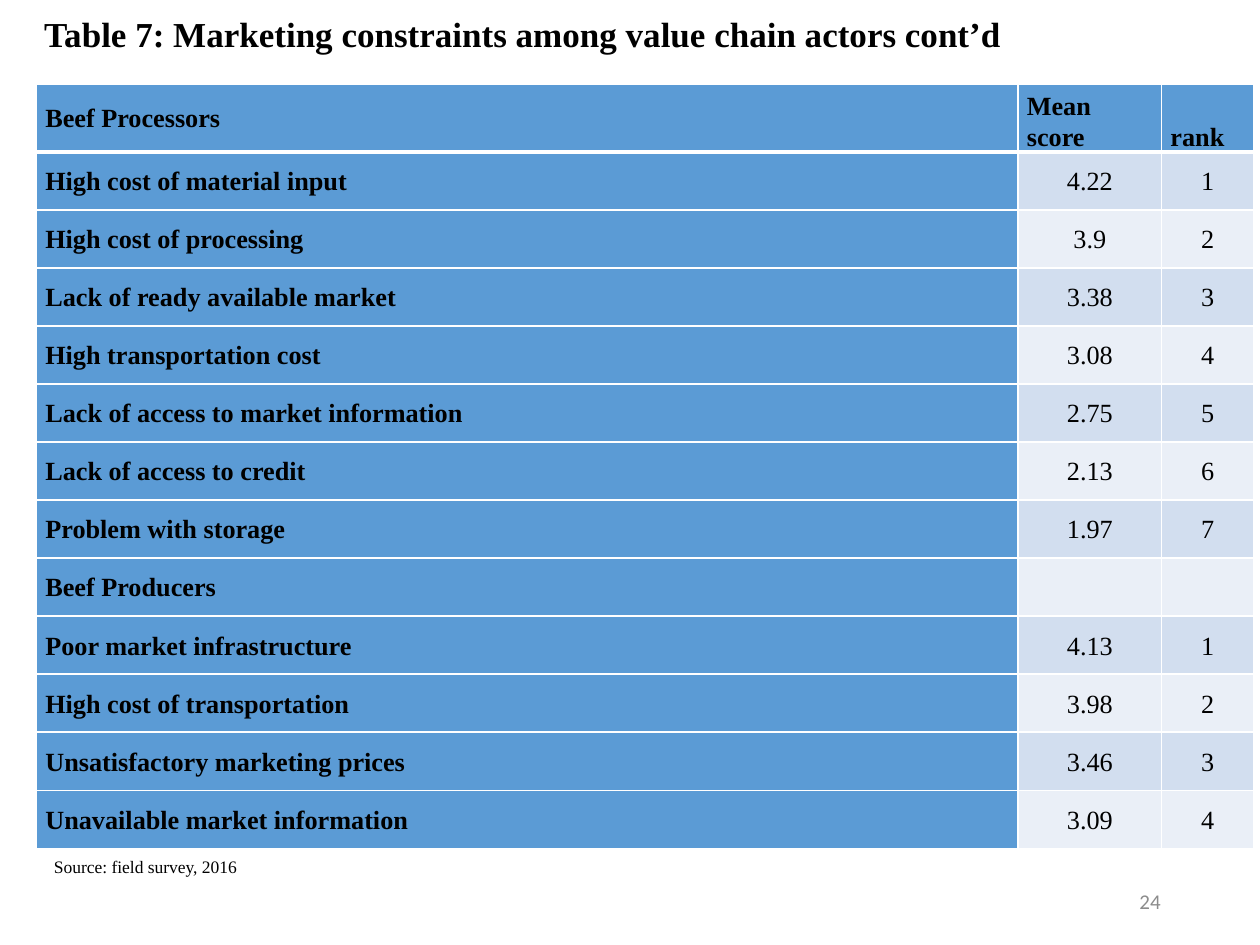
from dataclasses import dataclass
from typing import Optional

from lxml import etree
from pptx import Presentation
from pptx import util as u
from pptx.dml import color
from pptx.enum import text
from pptx.oxml import ns

GRID_COLUMNS, GRID_ROWS = 100, 75
SLIDE_WIDTH, SLIDE_HEIGHT = u.Inches(10), u.Inches(7.5)
SERIF, SANS = "Times New Roman", "Calibri"
BLACK, WHITE, GREY = "000000", "FFFFFF", "8C8C8C"
HEADING_BLUE, BANDS = "5B9BD5", ("D2DEEF", "EAEFF7")
COLUMN_SPANS = (77.9, 11.4, 7.3)
ROW_SPAN = 4.61
ALIGN, ANCHOR = text.PP_ALIGN, text.MSO_ANCHOR


@dataclass(frozen=True)
class Area:
    column: float
    row: float
    columns: float
    rows: float


@dataclass(frozen=True)
class Constraint:
    label: str
    score: str = ""
    rank: str = ""


TITLE_AREA = Area(2.5, 0, 95, 5.8)
TABLE_AREA = Area(2.9, 6.7, sum(COLUMN_SPANS), 13 * ROW_SPAN)
SOURCE_AREA = Area(3.3, 67.6, 40, 2.6)
NUMBER_AREA = Area(70.6, 69.5, 22.5, 4)

CONSTRAINTS = (
    Constraint("Beef Processors", "Mean score", "rank"),
    Constraint("High cost of material input", "4.22", "1"),
    Constraint("High cost of processing", "3.9", "2"),
    Constraint("Lack of ready available market", "3.38", "3"),
    Constraint("High transportation cost", "3.08", "4"),
    Constraint("Lack of access to market information", "2.75", "5"),
    Constraint("Lack of access to credit", "2.13", "6"),
    Constraint("Problem with storage", "1.97", "7"),
    Constraint("Beef Producers"),
    Constraint("Poor market infrastructure", "4.13", "1"),
    Constraint("High cost of transportation", "3.98", "2"),
    Constraint("Unsatisfactory marketing prices", "3.46", "3"),
    Constraint("Unavailable market information", "3.09", "4"),
)


def across(columns: float) -> int:
    return round(SLIDE_WIDTH * columns / GRID_COLUMNS)


def down(rows: float) -> int:
    return round(SLIDE_HEIGHT * rows / GRID_ROWS)


def bounds(area: Area) -> tuple:
    return across(area.column), down(area.row), across(area.columns), down(area.rows)


def rgb(value: str) -> color.RGBColor:
    return color.RGBColor.from_string(value)


def write(frame, wording: str, *, size: float, font: str = SERIF, ink: str = BLACK,
          bold: bool = False, align=ALIGN.LEFT, spacing: Optional[float] = None) -> None:
    paragraph = frame.paragraphs[0]
    paragraph.alignment = align
    paragraph.line_spacing = spacing
    paragraph.font.size = u.Pt(size)
    if wording:
        run = paragraph.add_run()
        run.text = wording
        run.font.size = u.Pt(size)
        run.font.name = font
        run.font.bold = bold
        run.font.color.rgb = rgb(ink)


def add_note(slide, area: Area, wording: str, **style) -> None:
    frame = slide.shapes.add_textbox(*bounds(area)).text_frame
    frame.word_wrap = True
    frame.vertical_anchor = ANCHOR.MIDDLE
    write(frame, wording, **style)


def add_borders(cell, bottom_width: float) -> None:
    properties = cell._tc.get_or_add_tcPr()
    for side, width in (("L", 1), ("R", 1), ("T", 1), ("B", bottom_width)):
        line = etree.SubElement(properties, ns.qn(f"a:ln{side}"), w=str(u.Pt(width)))
        fill = etree.SubElement(line, ns.qn("a:solidFill"))
        etree.SubElement(fill, ns.qn("a:srgbClr"), val=WHITE)


def format_cell(cell, wording: str, row: int, column: int) -> None:
    is_header = row == 0
    is_heading = is_header or column == 0
    add_borders(cell, 3 if is_header else 1)
    cell.fill.solid()
    cell.fill.fore_color.rgb = rgb(HEADING_BLUE if is_heading else BANDS[(row - 1) % 2])
    cell.margin_left = cell.margin_right = across(0.7)
    cell.margin_top = cell.margin_bottom = 0
    cell.vertical_anchor = ANCHOR.BOTTOM if is_header and column else ANCHOR.MIDDLE
    write(cell.text_frame, wording, size=15, bold=is_heading, spacing=1.07,
          align=ALIGN.LEFT if is_heading else ALIGN.CENTER)


def add_constraints(slide) -> None:
    table = slide.shapes.add_table(
        len(CONSTRAINTS), len(COLUMN_SPANS), *bounds(TABLE_AREA)).table
    table.first_col = True
    for column, span in zip(table.columns, COLUMN_SPANS):
        column.width = across(span)
    for row, constraint in enumerate(CONSTRAINTS):
        table.rows[row].height = down(ROW_SPAN)
        entries = (constraint.label, constraint.score, constraint.rank)
        for column, wording in enumerate(entries):
            format_cell(table.cell(row, column), wording, row, column)


def add_title(slide, wording: str) -> None:
    title = slide.shapes.title
    title.left, title.top, title.width, title.height = bounds(TITLE_AREA)
    title.text_frame.vertical_anchor = ANCHOR.MIDDLE
    write(title.text_frame, wording, size=20, bold=True, spacing=0.9)


def main() -> None:
    deck = Presentation()
    deck.slide_width, deck.slide_height = SLIDE_WIDTH, SLIDE_HEIGHT
    slide = deck.slides.add_slide(deck.slide_layouts.get_by_name("Title Only"))
    add_title(slide, "Table 7: Marketing constraints among value chain actors cont’d")
    add_note(slide, SOURCE_AREA, "Source: field survey, 2016", size=10, spacing=0.8)
    add_constraints(slide)
    add_note(slide, NUMBER_AREA, "24", size=12, font=SANS, ink=GREY, align=ALIGN.RIGHT)
    deck.save("out.pptx")


if __name__ == "__main__":
    main()
